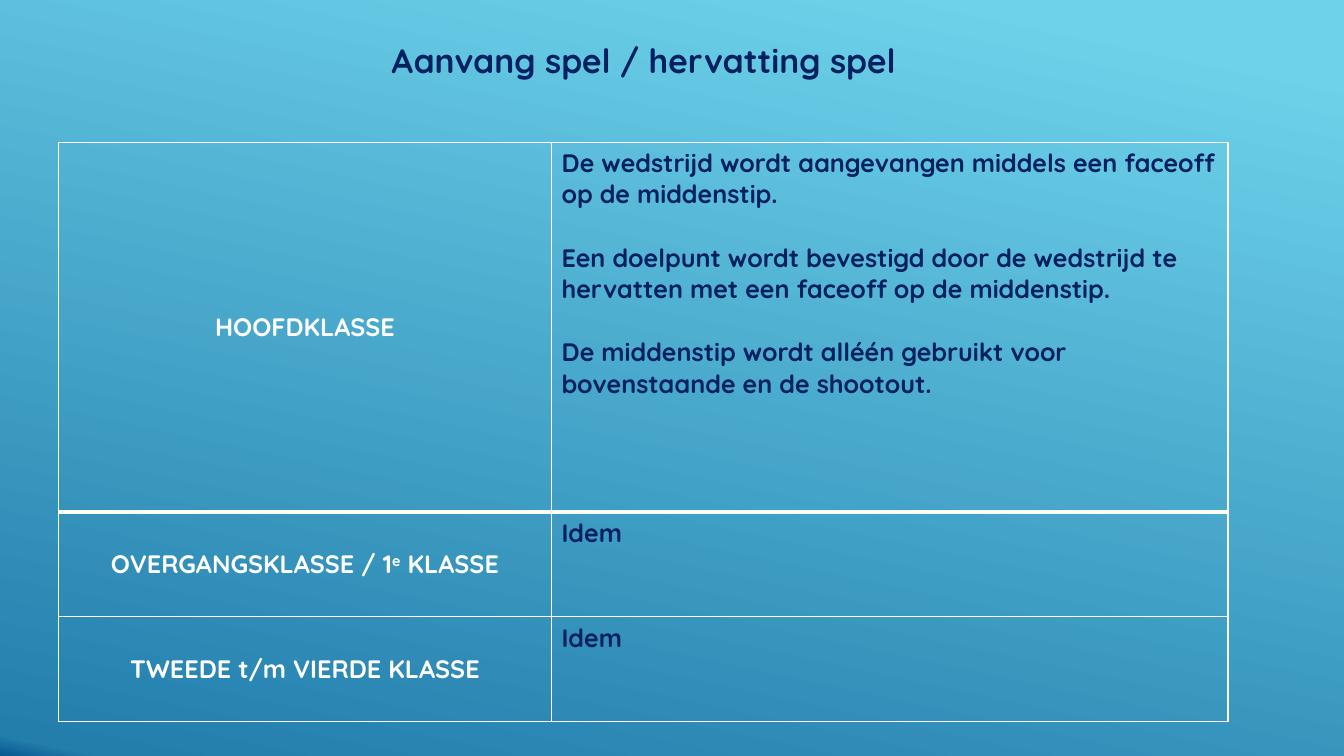
from copy import deepcopy
from lxml import etree
from pptx import Presentation, util as u
from pptx.dml.color import RGBColor
from pptx.enum import text
from pptx.oxml import ns

TITLE = "Aanvang spel / hervatting spel"
CLASSES = [
    (
        [("HOOFDKLASSE", False)],
        [
            "De wedstrijd wordt aangevangen middels een faceoff op de middenstip.",
            "Een doelpunt wordt bevestigd door de wedstrijd te hervatten met een faceoff op de middenstip.",
            "De middenstip wordt alléén gebruikt voor bovenstaande en de shootout.",
        ],
    ),
    ([("OVERGANGSKLASSE / 1", False), ("e", True), (" KLASSE", False)], ["Idem"]),
    ([("TWEEDE t/m VIERDE KLASSE", False)], ["Idem"]),
]
COLORS = {"navy": "002060", "white": "FFFFFF"}
BACKGROUND = [(0.07, "6ED2EB"), (0.98, "237EAC"), (1, "06588E")]
FONT = "Quicksand"
COLUMNS = [4.89, 6.71]
ROWS = [3.67, 1.04, 1.04]
TABLE_LEFT, TABLE_TOP = 0.58, 1.41
BODY_SIZE = 18
PARAGRAPH_GAP = 22.5


def paint_background(page):
    fill = page.background.fill
    fill.gradient()
    fill.gradient_angle = 258
    stop_list = page.element.find(".//" + ns.qn("a:gsLst"))
    stop_list.append(deepcopy(stop_list[-1]))
    for stop, (position, color) in zip(fill.gradient_stops, BACKGROUND):
        stop.position = position
        stop.color.rgb = RGBColor.from_string(color)


def add_span(para, words, size, color, raised=False):
    span = para.add_run()
    span.text = words
    span.font.name = FONT
    span.font.size = u.Pt(size)
    span.font.bold = True
    span.font.color.rgb = RGBColor.from_string(COLORS[color])
    if raised:
        span.font._element.set("baseline", "30000")


def draw_borders(cell, widths):
    properties = cell._tc.get_or_add_tcPr()
    for side, width in widths.items():
        line = etree.SubElement(properties, ns.qn(f"a:ln{side}"), w=str(u.Pt(width)))
        solid = etree.SubElement(line, ns.qn("a:solidFill"))
        etree.SubElement(solid, ns.qn("a:srgbClr"), val=COLORS["white"])
    cell.fill.background()


def add_class_table(page):
    frame = page.shapes.add_table(
        len(ROWS), len(COLUMNS), u.Inches(TABLE_LEFT), u.Inches(TABLE_TOP),
        u.Inches(sum(COLUMNS)), u.Inches(sum(ROWS)))
    table = frame.table
    table.first_row = table.horz_banding = False
    for column, width in zip(table.columns, COLUMNS):
        column.width = u.Inches(width)
    for index, (height, (label, rules)) in enumerate(zip(ROWS, CLASSES)):
        table.rows[index].height = u.Inches(height)
        label_cell, rule_cell = table.cell(index, 0), table.cell(index, 1)
        borders = {"L": 1, "R": 1, "T": 3 if index == 1 else 1, "B": 3 if index == 0 else 1}
        for cell in (label_cell, rule_cell):
            draw_borders(cell, borders)
        label_cell.vertical_anchor = text.MSO_ANCHOR.MIDDLE
        para = label_cell.text_frame.paragraphs[0]
        para.alignment = text.PP_ALIGN.CENTER
        for words, raised in label:
            add_span(para, words, BODY_SIZE, "white", raised)
        for number, rule in enumerate(rules):
            body = rule_cell.text_frame
            para = body.add_paragraph() if number else body.paragraphs[0]
            para.space_before = u.Pt(PARAGRAPH_GAP if number else 0)
            add_span(para, rule, BODY_SIZE, "navy")


def add_title(page):
    box = page.shapes.add_textbox(u.Inches(3.56), u.Inches(0.35), u.Inches(5.65), u.Inches(0.5))
    box.text_frame.word_wrap = True
    box.text_frame.auto_size = text.MSO_AUTO_SIZE.SHAPE_TO_FIT_TEXT
    para = box.text_frame.paragraphs[0]
    para.alignment = text.PP_ALIGN.CENTER
    add_span(para, TITLE, 24, "navy")


def main():
    deck = Presentation()
    deck.slide_width, deck.slide_height = u.Inches(13.33), u.Inches(7.5)
    page = deck.slides.add_slide(deck.slide_layouts[6])
    paint_background(page)
    add_class_table(page)
    add_title(page)
    deck.save("out.pptx")


if __name__ == "__main__":
    main()
